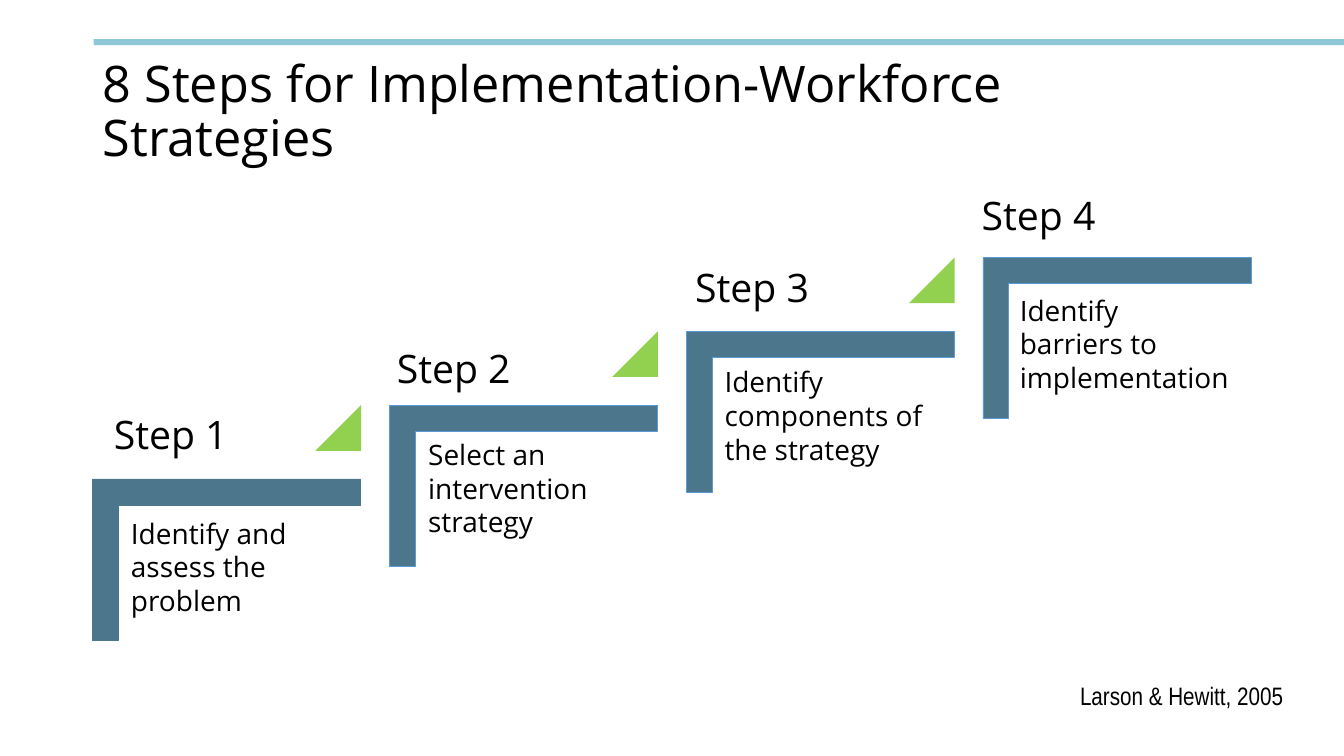
from pptx import Presentation
from pptx.dml.color import RGBColor
from pptx.enum import shapes, text
from pptx.util import Cm, Pt

COLORS = {"bar": "8EC7D7", "step": "4C768C", "edge": "5B9BD5",
          "rise": "92D050", "ink": "000000"}
FORMS = shapes.MSO_SHAPE

# Label, its left and top; detail, its left, top and width (cm)
STEPS = [
    ("Step 1", 2.62, 10.21, "Identify and assess the problem", 3.05, 12.88, 5.82),
    ("Step 2", 9.75, 8.56, "Select an intervention strategy", 10.54, 10.9, 5.82),
    ("Step 3", 17.27, 6.5, "Identify components of the strategy", 18.01, 9.07, 6.35),
    ("Step 4", 24.49, 4.7, "Identify\nbarriers to implementation", 25.45, 7.26, 6.07),
]
PITCH, RISE = 7.48, 1.86


class Deck:
    """Holds the style, the slide and the group being filled."""

    def __init__(self):
        self.prs = Presentation()
        self.prs.slide_width, self.prs.slide_height = Cm(33.87), Cm(19.05)
        self.slide = self.prs.slides.add_slide(self.prs.slide_layouts[6])
        self.home = self.slide.shapes

    def group(self):
        self.home = self.slide.shapes.add_group_shape().shapes

    def shape(self, form, box, fill, line=None):
        item = self.home.add_shape(form, *map(Cm, box))
        item.shadow.inherit = False
        item.fill.solid()
        item.fill.fore_color.rgb = RGBColor.from_string(COLORS[fill])
        if line:
            item.line.color.rgb = RGBColor.from_string(COLORS[line])
            item.line.width = Pt(0.5)
        else:
            item.line.fill.background()
        return item

    def words(self, words, box, size, font="Open Sans"):
        frame = self.home.add_textbox(*map(Cm, box)).text_frame
        frame.word_wrap = True
        para = frame.paragraphs[0]
        para.text = words
        for run in para.runs:
            run.font.name, run.font.size = font, Pt(size)
            run.font.color.rgb = RGBColor.from_string(COLORS["ink"])
        return frame

    def step(self, index, label, left, top, detail, x, y, width):
        """Draws one stair; all but the last lead on with a triangle."""
        self.group()
        across, up = index * PITCH, index * RISE
        stair = self.shape(FORMS.CORNER, (3.68 + across, 10.72 - up, 4.06, 6.76),
                           "step", "edge" if index else "step")
        stair.rotation = 90
        stair.adjustments[0] = stair.adjustments[1] = 0.161
        if index < len(STEPS) - 1:
            rise = self.shape(FORMS.ISOSCELES_TRIANGLE,
                              (7.95 + across, 10.21 - up, 1.15, 1.15), "rise")
            rise.adjustments[0] = 1
        self.words(label, (left, top, 5.33, 1.45), 28)
        self.words(detail, (x, y, width, 2.82), 20)


def main():
    deck = Deck()
    deck.shape(FORMS.RECTANGLE, (2.36, 0.99, 31.51, 0.15), "bar")
    title = deck.words("8 Steps for Implementation-Workforce Strategies",
                       (2.34, 1.02, 29.1, 3.68), 36)
    title.vertical_anchor = text.MSO_ANCHOR.MIDDLE
    title.paragraphs[0].line_spacing = 0.9
    credit = deck.words("Larson & Hewitt, 2005", (25.5, 17.02, 7.09, 1.02),
                        18, "Arial Narrow")
    credit.paragraphs[0].alignment = text.PP_ALIGN.RIGHT
    for index, step in enumerate(STEPS):
        deck.step(index, *step)
    deck.prs.save("out.pptx")


if __name__ == "__main__":
    main()
